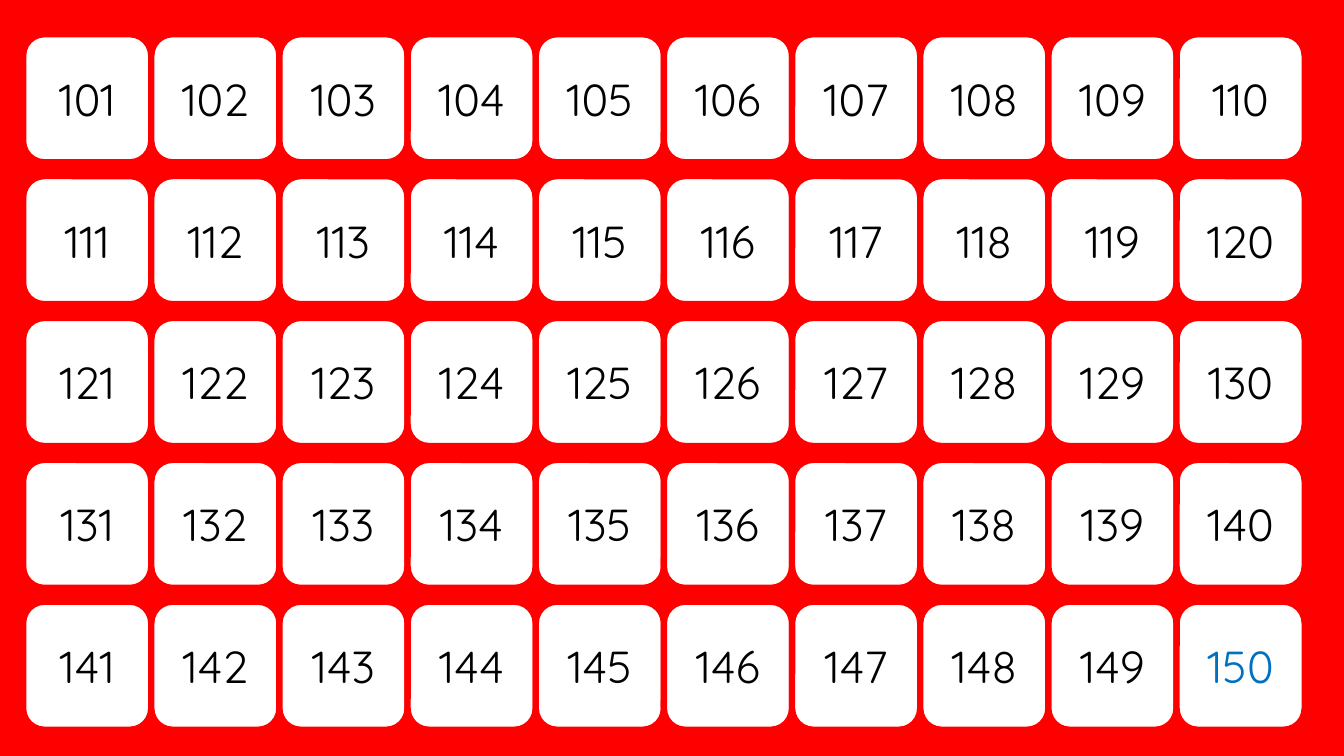
from dataclasses import dataclass

from pptx import Presentation
from pptx.dml.color import RGBColor
from pptx.enum.shapes import MSO_SHAPE
from pptx.enum.text import MSO_ANCHOR, PP_ALIGN
from pptx.util import Inches, Pt


@dataclass(frozen=True)
class Theme:
    background: RGBColor = RGBColor(0xFF, 0x00, 0x00)
    card: RGBColor = RGBColor(0xFF, 0xFF, 0xFF)
    number: RGBColor = RGBColor(0x00, 0x00, 0x00)
    highlight: RGBColor = RGBColor(0x00, 0x70, 0xC0)
    font: str = "Quicksand"
    number_size: Pt = Pt(32)
    border: Pt = Pt(4.5)


THEME = Theme()
ROWS, COLUMNS = 5, 10
FIRST_NUMBER = 101
HIGHLIGHTED_NUMBER = 150
CARD_SIDE = Inches(1.27)


def write_text(frame, text, *, color, size=THEME.number_size, font=THEME.font,
               align=PP_ALIGN.CENTER, anchor=MSO_ANCHOR.MIDDLE):
    frame.word_wrap = True
    frame.vertical_anchor = anchor
    paragraph = frame.paragraphs[0]
    paragraph.alignment = align
    run = paragraph.add_run()
    run.text = text
    run.font.name = font
    run.font.size = size
    run.font.color.rgb = color


def add_card(slide, number, left, top, side):
    card = slide.shapes.add_shape(MSO_SHAPE.ROUNDED_RECTANGLE, left, top, side, side)
    card.shadow.inherit = False
    card.fill.solid()
    card.fill.fore_color.rgb = THEME.card
    card.line.color.rgb = THEME.background
    card.line.width = THEME.border
    color = THEME.highlight if number == HIGHLIGHTED_NUMBER else THEME.number
    write_text(card.text_frame, str(number), color=color)


def add_number_grid(slide, left, top, width, height):
    column_step = (width - CARD_SIDE) / (COLUMNS - 1)
    row_step = (height - CARD_SIDE) / (ROWS - 1)
    for index in range(ROWS * COLUMNS):
        row, column = divmod(index, COLUMNS)
        add_card(slide, FIRST_NUMBER + index,
                 round(left + column * column_step),
                 round(top + row * row_step), CARD_SIDE)


def main():
    deck = Presentation()
    deck.slide_width = Inches(13.33)
    deck.slide_height = Inches(7.5)
    slide = deck.slides.add_slide(deck.slide_layouts.get_by_name("Blank"))
    slide.background.fill.solid()
    slide.background.fill.fore_color.rgb = THEME.background
    add_number_grid(slide, Inches(0.23), Inches(0.34), Inches(12.71), Inches(6.9))
    deck.save("out.pptx")


if __name__ == "__main__":
    main()
